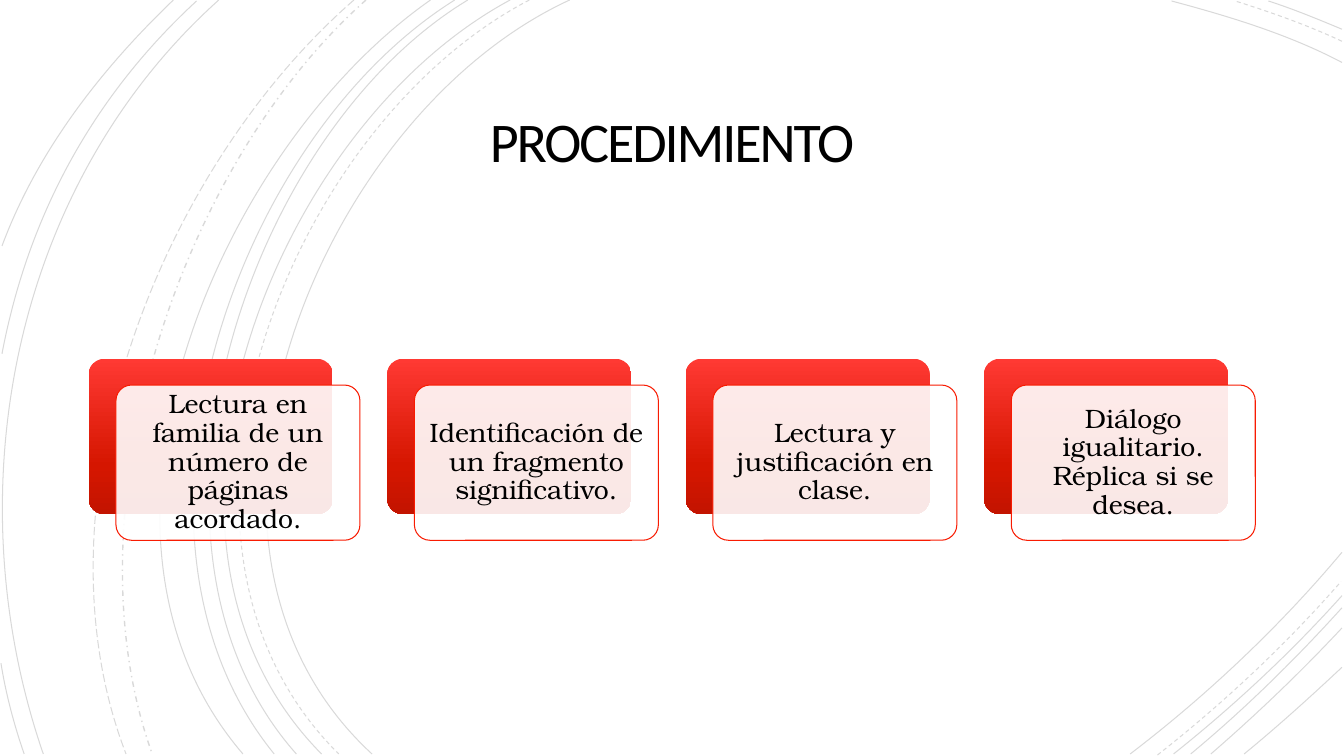
from copy import deepcopy

from pptx import Presentation
from pptx.dml.color import RGBColor
from pptx.enum.dml import MSO_LINE
from pptx.enum.shapes import MSO_SHAPE
from pptx.enum.text import MSO_ANCHOR, PP_ALIGN
from pptx.oxml.ns import qn
from pptx.oxml.xmlchemy import OxmlElement
from pptx.util import Inches, Pt

SOLID, DASH = MSO_LINE.SOLID, MSO_LINE.DASH
DASH_DOT, LONG_DASH = MSO_LINE.DASH_DOT, MSO_LINE.LONG_DASH
ROUNDED = MSO_SHAPE.ROUNDED_RECTANGLE
CENTER, MIDDLE = PP_ALIGN.CENTER, MSO_ANCHOR.MIDDLE

# Start, two control points and end of each background curve, in inches
ARCS = [
    (SOLID, [(5.65, 0), (3.15, 1.15), (1.43, 5.4), (3.69, 7.48)]),
    (SOLID, [(13.31, 0.62), (12.78, 0.34), (12.18, 0.16), (11.62, 0.01)]),
    (SOLID, [(11.21, 7.48), (11.97, 6.9), (12.69, 6.22), (13.31, 5.48)]),
    (DASH, [(5.25, 0), (2.85, 1.25), (1.23, 5.37), (3.36, 7.48)]),
    (DASH, [(13.31, 0.41), (12.97, 0.25), (12.6, 0.12), (12.25, 0.01)]),
    (DASH, [(11.48, 7.49), (12.13, 6.98), (12.75, 6.4), (13.3, 5.77)]),
    (SOLID, [(5.06, 0), (2.7, 1.27), (1.1, 5.37), (3.19, 7.48)]),
    (SOLID, [(13.31, 0.29), (13.07, 0.19), (12.83, 0.09), (12.58, 0.01)]),
    (SOLID, [(11.64, 7.48), (12.23, 7.01), (12.8, 6.48), (13.31, 5.91)]),
    (SOLID, [(4.64, 0), (2.44, 1.33), (1.1, 5.41), (2.94, 7.48)]),
    (SOLID, [(11.81, 7.48), (12.34, 7.04), (12.84, 6.55), (13.31, 6.03)]),
    (SOLID, [(4.51, 0), (2.31, 1.38), (0.97, 5.33), (2.72, 7.48)]),
    (SOLID, [(12.01, 7.48), (12.46, 7.09), (12.9, 6.67), (13.31, 6.23)]),
    (SOLID, [(4.27, 0), (2.17, 1.47), (0.53, 5.29), (2.41, 7.48)]),
    (SOLID, [(12.34, 7.48), (12.67, 7.21), (12.99, 6.92), (13.31, 6.62)]),
    (DASH_DOT, [(3.63, 0), (1.76, 1.66), (0.65, 5.09), (1.51, 7.48)]),
    (LONG_DASH, [(3.51, 0), (1.57, 1.69), (0.29, 4.99), (1.25, 7.48)]),
    (SOLID, [(2.17, 0), (0.11, 1.85), (-0.46, 4.9), (0.43, 7.48)]),
    (SOLID, [(1.95, 0.01), (0.92, 0.96), (0.28, 2.14), (0.02, 3.51)]),
    (SOLID, [(0.01, 6.58), (0.06, 6.89), (0.14, 7.19), (0.24, 7.48)]),
    (SOLID, [(1.72, 0), (1, 0.69), (0.37, 1.5), (0.02, 2.44)]),
]
STEPS = [
    "Lectura en familia de un número de páginas acordado.",
    "Identificación de un fragmento significativo.",
    "Lectura y justificación en clase.",
    "Diálogo igualitario. Réplica si se desea.",
]
RED_STOPS = [(0, "FF3933"), (0.69, "D51600"), (1, "C31400")]
CARD_LEFT, CARD_TOP, CARD_PITCH = 0.88, 3.56, 2.96
CARD_WIDTH, CARD_HEIGHT, FRONT_OFFSET = 2.42, 1.54, 0.27


def paint(color_format, color, opacity=100):
    """Set a hex colour and, below 100, its opacity in percent."""
    color_format.rgb = RGBColor.from_string(color)
    if opacity < 100:
        alpha = OxmlElement("a:alpha")
        alpha.set("val", str(opacity * 1000))
        color_format._xFill.find(qn("a:srgbClr")).append(alpha)


def write(frame, text, font_name, size, spacing, inset):
    """Fill a text frame with one centred black paragraph."""
    frame.text = text
    frame.word_wrap = True
    frame.vertical_anchor = MIDDLE
    frame.margin_left = frame.margin_right = Inches(inset)
    frame.margin_top = frame.margin_bottom = Inches(inset)
    para = frame.paragraphs[0]
    para.alignment = CENTER
    para.line_spacing = spacing
    para.font.name = font_name
    para.font.size = Pt(size)
    paint(para.font.color, "000000")


deck = Presentation()
deck.slide_width, deck.slide_height = Inches(13.33), Inches(7.5)
page = deck.slides.add_slide(deck.slide_layouts[5])
page.background.fill.solid()
paint(page.background.fill.fore_color, "FFFFFF")

# Background curves
for dash, points in ARCS:
    start, *others = [(Inches(x), Inches(y)) for x, y in points]
    builder = page.shapes.build_freeform(*start)
    builder.add_line_segments(others, close=False)
    arc = builder.convert_to_shape()
    arc.shadow.inherit = False
    arc.fill.background()
    arc.line.width = Pt(1 if dash == DASH_DOT else 0.75)
    arc.line.fill.solid()
    arc_color = arc.line.fill.fore_color
    arc_color.rgb = RGBColor.from_string("000000")
    alpha = OxmlElement("a:alpha")
    alpha.set("val", "15000")
    arc._element.spPr.find(qn("a:ln")).find(".//" + qn("a:srgbClr")).append(alpha)
    arc.line.dash_style = dash
    # Join the three straight segments into one Bézier curve
    outline = arc._element.find(".//" + qn("a:path"))
    curve = OxmlElement("a:cubicBezTo")
    for segment in outline.findall(qn("a:lnTo")):
        curve.append(segment[0])
        outline.remove(segment)
    outline.append(curve)

# Title
title = page.shapes.title
title.left, title.top = Inches(1.92), Inches(0.87)
title.width, title.height = Inches(9.49), Inches(1.15)
write(title.text_frame, "PROCEDIMIENTO", "Calibri", 40, 0.85, 0.25)
title.text_frame.paragraphs[0].runs[0].font._element.set("spc", "-150")

# Step cards: a red block with a translucent card in front
for index, step in enumerate(STEPS):
    left = CARD_LEFT + index * CARD_PITCH
    block, card = [
        page.shapes.add_shape(ROUNDED, Inches(left + shift), Inches(CARD_TOP + drop),
                              Inches(CARD_WIDTH), Inches(CARD_HEIGHT))
        for shift, drop in [(0, 0), (FRONT_OFFSET, 0.26)]
    ]
    for shape in (block, card):
        shape.adjustments[0] = 0.1
        shape.shadow.inherit = False

    block.line.fill.background()
    block.fill.gradient()
    block.fill.gradient_angle = 270
    stop_list = block._element.find(".//" + qn("a:gsLst"))
    stop_list.append(deepcopy(stop_list[-1]))
    for stop, (position, color) in zip(block.fill.gradient_stops, RED_STOPS):
        stop.position = position
        paint(stop.color, color)

    card.fill.solid()
    paint(card.fill.fore_color, "FFFFFF", 90)
    paint(card.line.color, "F81B02")
    card.line.width = Pt(0.75)
    write(card.text_frame, step, "TeX Gyre Bonum", 19, 0.9, 0.08)

deck.save("out.pptx")
